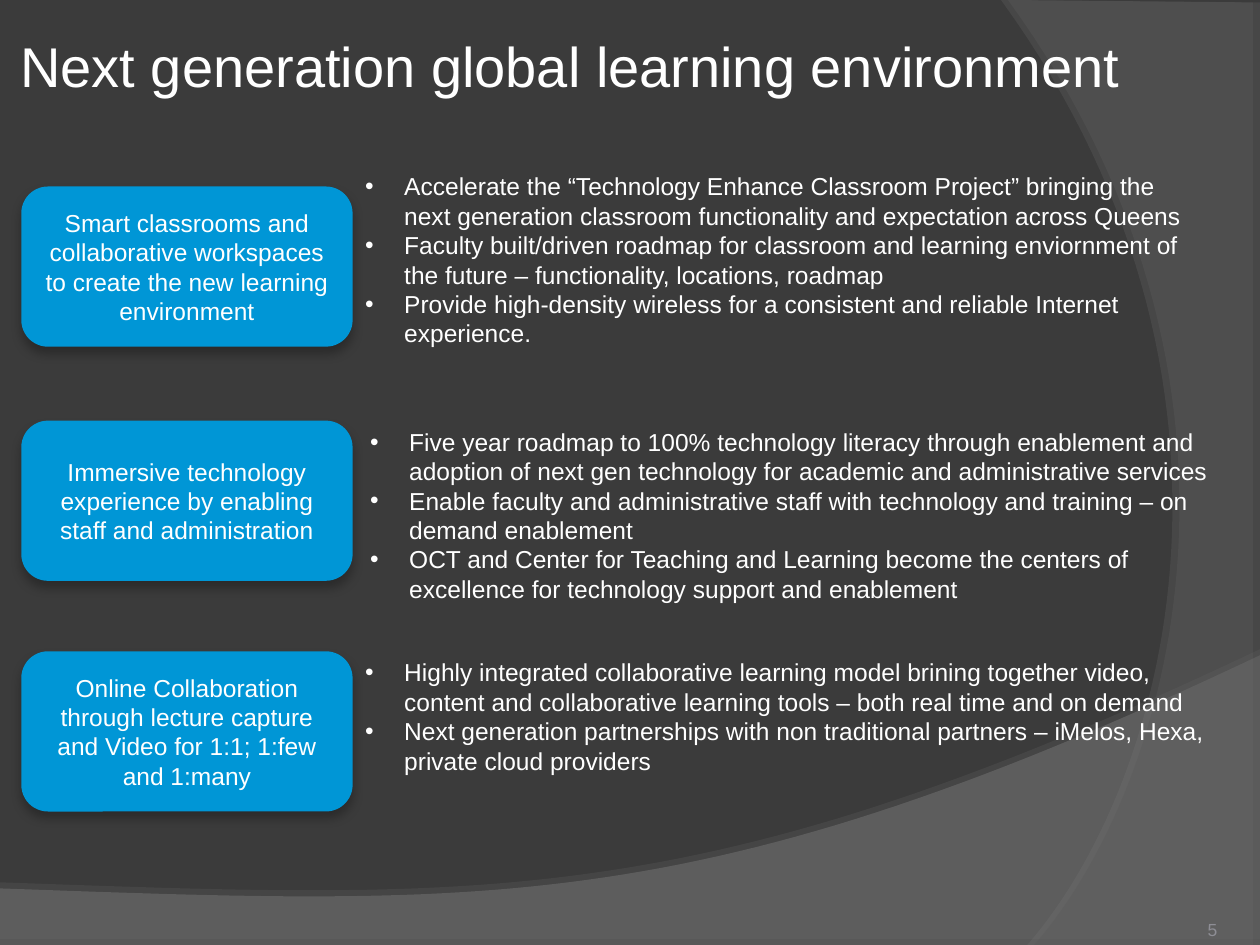
from dataclasses import dataclass

from lxml import etree
from pptx import Presentation
from pptx.dml.color import RGBColor
from pptx.enum.shapes import MSO_SHAPE
from pptx.enum.text import MSO_ANCHOR, MSO_AUTO_SIZE, PP_ALIGN
from pptx.oxml.ns import qn
from pptx.util import Cm, Pt

ROUNDED = MSO_SHAPE.ROUNDED_RECTANGLE
TOP, MIDDLE, BOTTOM = MSO_ANCHOR.TOP, MSO_ANCHOR.MIDDLE, MSO_ANCHOR.BOTTOM
LEFT, CENTER, RIGHT = PP_ALIGN.LEFT, PP_ALIGN.CENTER, PP_ALIGN.RIGHT
NO_AUTOFIT = MSO_AUTO_SIZE.NONE

# Content
TITLE = "Next generation global learning environment"
PAGE_NUMBER = "5"
THEMES = [
    {
        "card": "Smart classrooms and collaborative workspaces to create the new learning environment",
        "card_top": 3.76, "list_left": 7.11, "list_top": 3.33,
        "bullets": [
            "Accelerate the “Technology Enhance Classroom Project” bringing the next generation classroom functionality and expectation across Queens",
            "Faculty built/driven roadmap for classroom and learning enviornment of the future – functionality, locations, roadmap",
            "Provide high-density wireless for a consistent and reliable Internet experience.",
        ],
    },
    {
        "card": "Immersive technology experience by enabling staff and administration",
        "card_top": 8.48, "list_left": 7.21, "list_top": 8.48,
        "bullets": [
            "Five year roadmap to 100% technology literacy through enablement and adoption of next gen technology for academic and administrative services",
            "Enable faculty and administrative staff with technology and training – on demand enablement",
            "OCT and Center for Teaching and Learning become the centers of excellence for technology support and enablement",
        ],
    },
    {
        "card": "Online Collaboration through lecture capture and Video for 1:1; 1:few and 1:many",
        "card_top": 13.13, "list_left": 7.11, "list_top": 13.13,
        "bullets": [
            "Highly integrated collaborative learning model brining together video, content and collaborative learning tools – both real time and on demand",
            "Next generation partnerships with non traditional partners – iMelos, Hexa, private cloud providers",
        ],
    },
]

# Background sweeps in cm: straight corners, then a curve back to the start side
SWEEPS = [
    {
        "corners": [(0, 17.91), (0, 19.05), (25.4, 19.05), (25.4, 13.21)],
        "curve": [(14.2, 18.52), (9.93, 18.26), (0, 17.91)],
        "color": "7C7C7C", "opacity": 45,
        "shadow": {"color": "808080", "opacity": 35, "distance": 3.5, "angle": 270},
    },
    {
        "corners": [(25.4, 0.05), (25.4, 19.05), (20.85, 19.05)],
        "curve": [(23.75, 15.72), (25.86, 7.62), (20.32, 0)],
        "color": "595959", "opacity": 40,
        "shadow": {"color": "808080", "opacity": 45, "distance": 4, "angle": 180},
    },
]
CARD_SHADOW = {"color": "000000", "opacity": 27, "blur": 6, "distance": 4, "angle": 90}
CARD_LEFT, CARD_WIDTH, CARD_HEIGHT = 0.43, 6.68, 3.23
LIST_WIDTH, LIST_HEIGHT, BULLET_INDENT = 17.5, 3.84, 0.79
CURVE_STEPS = 60


@dataclass(frozen=True)
class Theme:
    font: str = "Arial"
    background: str = "3B3B3B"
    card: str = "0096D6"
    text: str = "FFFFFF"
    muted: str = "8E8E95"
    title_size: int = 32
    body_size: int = 14
    number_size: int = 10


THEME = Theme()


def fill_solid(fill, color, opacity=100):
    fill.solid()
    fill.fore_color.rgb = RGBColor.from_string(color)
    if opacity < 100:
        color_node = next(fill._xPr.iter(qn("a:srgbClr")))
        etree.SubElement(color_node, qn("a:alpha"), val=str(opacity * 1000))


def add_shadow(shape, color, opacity, distance, angle, blur=0):
    shape.shadow.inherit = False
    effects = shape._element.spPr.find(qn("a:effectLst"))
    outer = etree.SubElement(
        effects, qn("a:outerShdw"), blurRad=str(Pt(blur)), dist=str(Pt(distance)),
        dir=str(angle * 60000), algn="ctr", rotWithShape="0")
    color_node = etree.SubElement(outer, qn("a:srgbClr"), val=color)
    etree.SubElement(color_node, qn("a:alpha"), val=str(opacity * 1000))


def write_text(shape, lines, size=THEME.body_size, color=THEME.text, align=LEFT,
               anchor=TOP, bulleted=False, wrap=True, inset=None, line_spacing=None):
    frame = shape.text_frame
    frame.auto_size = NO_AUTOFIT
    frame.word_wrap = wrap
    frame.vertical_anchor = anchor
    if inset is not None:
        frame.margin_left = frame.margin_right = Cm(inset)
        frame.margin_top = frame.margin_bottom = Cm(inset)
    for index, line in enumerate(lines):
        para = frame.add_paragraph() if index else frame.paragraphs[0]
        para.alignment = align
        if line_spacing:
            para.line_spacing = line_spacing
        span = para.add_run()
        span.text = line
        span.font.name = THEME.font
        span.font.size = Pt(size)
        span.font.color.rgb = RGBColor.from_string(color)
        if bulleted:
            properties = para._p.get_or_add_pPr()
            properties.set("marL", str(Cm(BULLET_INDENT)))
            properties.set("indent", str(-Cm(BULLET_INDENT)))
            etree.SubElement(properties, qn("a:buFont"), typeface=THEME.font)
            etree.SubElement(properties, qn("a:buChar"), char="•")


def curve_points(start, first, second, end):
    for step in range(1, CURVE_STEPS + 1):
        t = step / CURVE_STEPS
        weights = ((1 - t) ** 3, 3 * t * (1 - t) ** 2, 3 * t ** 2 * (1 - t), t ** 3)
        points = (start, first, second, end)
        yield tuple(sum(w * p[axis] for w, p in zip(weights, points)) for axis in (0, 1))


def add_sweep(page, corners, curve, color, opacity, shadow):
    outline = corners + list(curve_points(corners[-1], *curve))
    points = [(Cm(x), Cm(y)) for x, y in outline]
    builder = page.shapes.build_freeform(*points[0])
    builder.add_line_segments(points[1:], close=True)
    sweep = builder.convert_to_shape()
    fill_solid(sweep.fill, color, opacity)
    sweep.line.fill.background()
    add_shadow(sweep, **shadow)


def add_theme_row(page, row):
    # Bulleted details
    box = page.shapes.add_textbox(Cm(row["list_left"]), Cm(row["list_top"]),
                                  Cm(LIST_WIDTH), Cm(LIST_HEIGHT))
    write_text(box, row["bullets"], bulleted=True)
    # Blue heading card
    card = page.shapes.add_shape(ROUNDED, Cm(CARD_LEFT), Cm(row["card_top"]),
                                 Cm(CARD_WIDTH), Cm(CARD_HEIGHT))
    fill_solid(card.fill, THEME.card)
    card.line.fill.background()
    add_shadow(card, **CARD_SHADOW)
    write_text(card, [row["card"]], align=CENTER, anchor=MIDDLE)


def main():
    deck = Presentation()
    deck.slide_width, deck.slide_height = Cm(25.4), Cm(19.05)
    page = deck.slides.add_slide(deck.slide_layouts[5])
    fill_solid(page.background.fill, THEME.background)

    # Background sweeps and page number
    for sweep in SWEEPS:
        add_sweep(page, **sweep)
    number = page.shapes.add_textbox(Cm(23.88), Cm(18.42), Cm(0.89), Cm(0.63))
    write_text(number, [PAGE_NUMBER], size=THEME.number_size, color=THEME.muted,
               align=RIGHT, anchor=BOTTOM, wrap=False, inset=0.1)
    number.text_frame.margin_right = Cm(0.23)

    # Title, brought in front of the sweeps
    title = page.shapes.title
    title.left, title.top, title.width, title.height = Cm(0.28), Cm(0.23), Cm(23.85), Cm(2.34)
    write_text(title, [TITLE], size=THEME.title_size, anchor=MIDDLE, inset=0.13,
               line_spacing=0.9)
    page.shapes._spTree.append(title._element)

    for row in THEMES:
        add_theme_row(page, row)
    deck.save("out.pptx")


if __name__ == "__main__":
    main()
